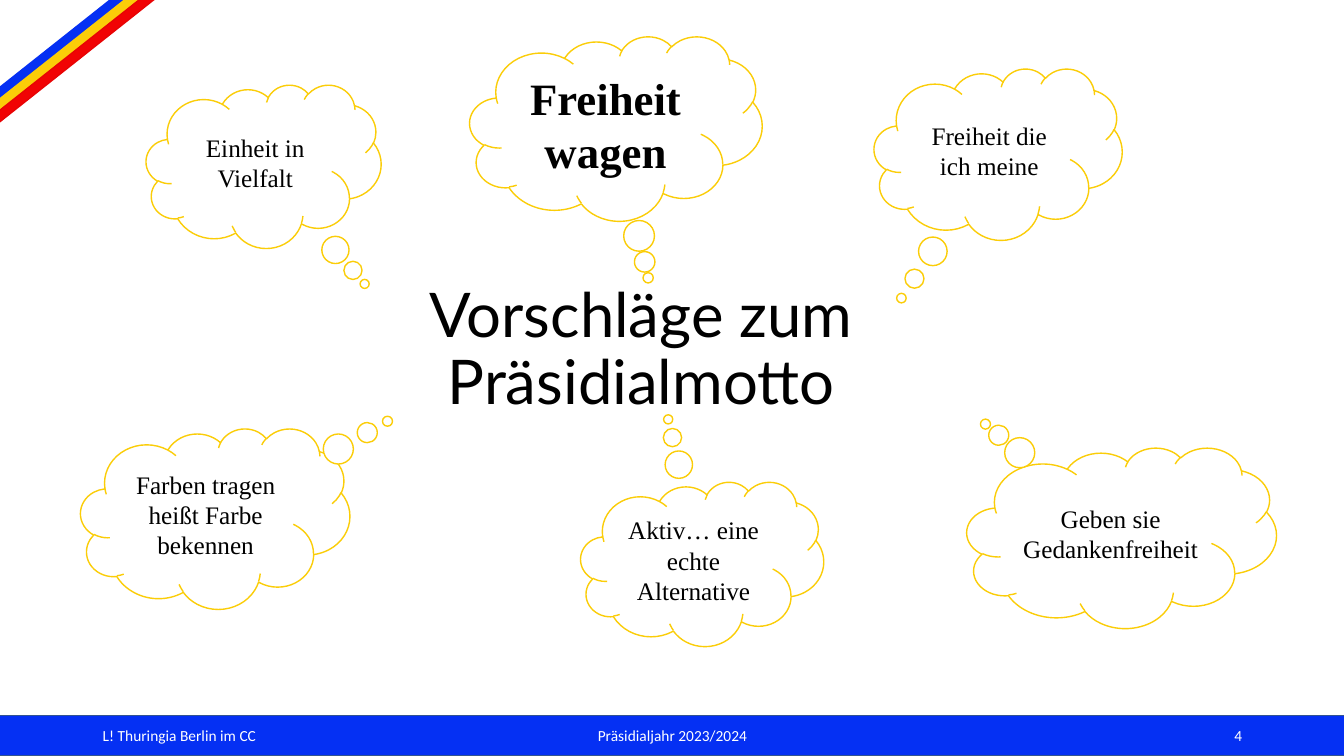
from dataclasses import dataclass

from pptx import Presentation
from pptx.dml.color import RGBColor
from pptx.enum.shapes import MSO_SHAPE
from pptx.enum.text import MSO_ANCHOR, MSO_AUTO_SIZE, PP_ALIGN
from pptx.shapes.autoshape import Shape
from pptx.slide import Slide
from pptx.util import Inches, Pt

RECT, CLOUD = MSO_SHAPE.RECTANGLE, MSO_SHAPE.CLOUD_CALLOUT
LEFT, CENTER, RIGHT = PP_ALIGN.LEFT, PP_ALIGN.CENTER, PP_ALIGN.RIGHT
MIDDLE = MSO_ANCHOR.MIDDLE
NO_FIT = MSO_AUTO_SIZE.NONE

Box = tuple[float, float, float, float]


@dataclass(frozen=True)
class Theme:
    blue: str = "0530F3"
    gold: str = "FBCD08"
    red: str = "F10304"
    red_edge: str = "E80304"
    bar_edge: str = "325491"
    white: str = "FFFFFF"
    black: str = "000000"
    head_font: str = "Lato"
    cloud_font: str = "Times New Roman"
    foot_font: str = "Calibri"
    head_size: int = 44
    motto_size: int = 32
    cloud_size: int = 18
    foot_size: int = 11


THEME = Theme()


@dataclass(frozen=True)
class Cloud:
    text: str
    box: Box
    tail: tuple[float, float]
    chosen: bool = False


@dataclass(frozen=True)
class Stripe:
    fill: str
    edge: str


@dataclass(frozen=True)
class Footer:
    text: str
    left: float
    width: float
    align: PP_ALIGN


CLOUDS = [
    Cloud("Einheit in Vielfalt", (1.45, 0.84, 2.33, 1.62), (0.43, 0.72)),
    Cloud("Aktiv… eine echte Alternative", (5.76, 4.78, 2.41, 1.63), (-0.14, -0.88)),
    Cloud("Freiheit wagen", (4.66, 0.36, 2.9, 1.83), (0.11, 0.81), chosen=True),
    Cloud("Farben tragen heißt Farbe bekennen", (0.8, 4.25, 2.67, 1.79), (0.64, -0.54)),
    Cloud("Freiheit die ich meine", (8.67, 0.68, 2.46, 1.7), (-0.39, 0.84)),
    Cloud("Geben sie Gedankenfreiheit", (9.59, 4.44, 3.07, 1.79), (-0.44, -0.63)),
]
STRIPES = [
    Stripe(THEME.blue, THEME.blue),
    Stripe(THEME.gold, THEME.gold),
    Stripe(THEME.red, THEME.red_edge),
]
FOOTERS = [
    Footer("L! Thuringia Berlin im CC", 0.92, 3, LEFT),
    Footer("Präsidialjahr 2023/2024", 4.42, 4.5, CENTER),
    Footer("4", 9.42, 3, RIGHT),
]
FOOT_TOP, FOOT_HIGH = 7.1, 0.4


def write(shape: Shape, text: str, *, font: str, size: int, color: str,
          align: PP_ALIGN = CENTER, bold: bool = False,
          spacing: float | None = None) -> None:
    frame = shape.text_frame
    frame.word_wrap = True
    frame.auto_size = NO_FIT
    frame.vertical_anchor = MIDDLE
    para = frame.paragraphs[0]
    para.alignment = align
    para.line_spacing = spacing
    run = para.add_run()
    run.text = text
    run.font.name = font
    run.font.size = Pt(size)
    run.font.bold = bold
    run.font.color.rgb = RGBColor.from_string(color)


def draw(slide: Slide, kind: MSO_SHAPE, box: Box, fill: str, edge: str) -> Shape:
    shape = slide.shapes.add_shape(kind, *map(Inches, box))
    shape.shadow.inherit = False
    shape.fill.solid()
    shape.fill.fore_color.rgb = RGBColor.from_string(fill)
    shape.line.color.rgb = RGBColor.from_string(edge)
    shape.line.width = Pt(1)
    return shape


def add_ribbon(slide: Slide) -> None:
    """Draw the slanted stripes across the top left corner."""
    for i, stripe in enumerate(STRIPES):
        box = (-0.88 + 0.055 * i, 0.41 + 0.07 * i, 2.94, 0.09)
        draw(slide, RECT, box, stripe.fill, stripe.edge).rotation = 321.6


def add_footer(slide: Slide) -> None:
    draw(slide, RECT, (-0.07, FOOT_TOP, 13.48, FOOT_HIGH), THEME.blue, THEME.bar_edge)
    for part in FOOTERS:
        box = (part.left, FOOT_TOP, part.width, FOOT_HIGH)
        label = slide.shapes.add_textbox(*map(Inches, box))
        write(label, part.text, font=THEME.foot_font, size=THEME.foot_size,
              color=THEME.white, align=part.align)


def add_cloud(slide: Slide, cloud: Cloud) -> None:
    shape = draw(slide, CLOUD, cloud.box, THEME.white, THEME.gold)
    shape.adjustments[0], shape.adjustments[1] = cloud.tail
    size = THEME.motto_size if cloud.chosen else THEME.cloud_size
    write(shape, cloud.text, font=THEME.cloud_font, size=size,
          color=THEME.black, bold=cloud.chosen)


def add_title(slide: Slide) -> None:
    title = slide.shapes.title
    title.left, title.top = Inches(2.22), Inches(3.04)
    title.width, title.height = Inches(8.28), Inches(0.89)
    write(title, "Vorschläge zum Präsidialmotto", font=THEME.head_font,
          size=THEME.head_size, color=THEME.black, spacing=0.9)
    title.text_frame.margin_left = title.text_frame.margin_right = Inches(0.15)


def main() -> None:
    deck = Presentation()
    deck.slide_width, deck.slide_height = Inches(13.33), Inches(7.5)
    slide = deck.slides.add_slide(deck.slide_layouts.get_by_name("Title Only"))
    add_footer(slide)
    add_ribbon(slide)
    for cloud in CLOUDS:
        add_cloud(slide, cloud)
    add_title(slide)
    deck.save("out.pptx")


if __name__ == "__main__":
    main()
